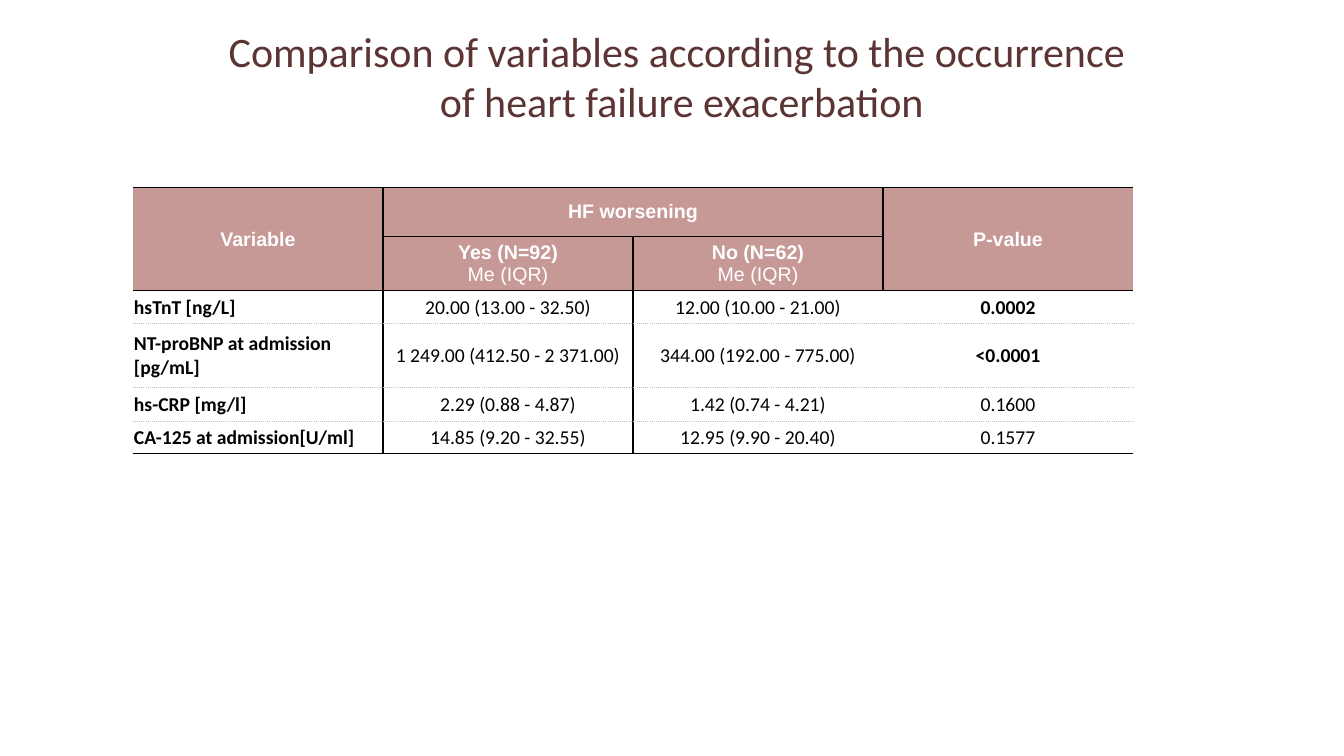
from lxml import etree
from pptx import Presentation
from pptx.dml.color import RGBColor
from pptx.enum import text as t
from pptx.oxml import parse_xml
from pptx.oxml.ns import nsdecls, qn
from pptx.util import Pt


def style(run, size, font, color, bold=False):
    run.font.size = Pt(size)
    run.font.name = font
    run.font.bold = bold
    run.font.color.rgb = RGBColor.from_string(color)


def edge(cell, side, color, dash):
    """Draw a 1 pt border; call in the order L, R, T, B, before the fill."""
    props = cell._tc.get_or_add_tcPr()
    line = etree.SubElement(props, qn(f"a:ln{side}"), w=str(Pt(1)))
    fill = etree.SubElement(line, qn("a:solidFill"))
    etree.SubElement(fill, qn("a:srgbClr"), val=color)
    etree.SubElement(line, qn("a:prstDash"), val=dash)


deck = Presentation()
deck.slide_width, deck.slide_height = Pt(960), Pt(540)
slide = deck.slides.add_slide(deck.slide_layouts[5])

# Title, raised by a bottom margin of one line
title = slide.shapes.title
title.left, title.top, title.width, title.height = Pt(8.6), Pt(33.8), Pt(957), Pt(77)
frame = title.text_frame
frame.text = "Comparison of variables according to the occurrence \vof heart failure exacerbation"
frame.auto_size = t.MSO_AUTO_SIZE.NONE
frame.vertical_anchor = t.MSO_ANCHOR.MIDDLE
frame.margin_bottom = Pt(39.6)
frame.paragraphs[0].alignment = t.PP_ALIGN.CENTER
for run in frame.paragraphs[0].runs:
    style(run, 30, "Calibri", "5B3433")
    shadow = parse_xml(
        f'<a:effectLst {nsdecls("a")}><a:outerShdw blurRad="38100" dist="38100" dir="2700000">'
        '<a:srgbClr val="000000"><a:alpha val="50000"/></a:srgbClr></a:outerShdw></a:effectLst>')
    run.font.fill._xPr.find(qn("a:solidFill")).addnext(shadow)

# Table
rows = [
    ["Variable", "HF worsening", "", "P-value"],
    ["", "Yes (N=92)\nMe (IQR)", "No (N=62)\nMe (IQR)", ""],
    ["hsTnT [ng/L]", "20.00 (13.00 - 32.50)", "12.00 (10.00 - 21.00)", "0.0002"],
    ["NT-proBNP at admission [pg/mL]", "1 249.00 (412.50 - 2 371.00)",
     "344.00 (192.00 - 775.00)", "<0.0001"],
    ["hs-CRP [mg/l]", "2.29 (0.88 - 4.87)", "1.42 (0.74 - 4.21)", "0.1600"],
    ["CA-125 at admission[U/ml]", "14.85 (9.20 - 32.55)", "12.95 (9.90 - 20.40)", "0.1577"],
]
heights = [35.2, 35.2, 23.3, 45.6, 24.5, 23]
strong = {"0.0002", "<0.0001"}
solid, dotted = ("000000", "solid"), ("BFBFBF", "sysDot")
rules = [solid, solid, solid, dotted, dotted, dotted, solid]  # from top to bottom

shape = slide.shapes.add_table(6, 4, Pt(95), Pt(133.9), Pt(714.4), Pt(sum(heights)))
grid = shape.table
grid.first_row = grid.horz_banding = False
shape.element.find(".//" + qn("a:tableStyleId")).text = "{2D5ABB26-0587-4C30-8999-92F81FD0307C}"
for col in grid.columns:
    col.width = Pt(178.6)
for row, height in zip(grid.rows, heights):
    row.height = Pt(height)
for first, last in [((0, 0), (1, 0)), ((0, 1), (0, 2)), ((0, 3), (1, 3))]:
    grid.cell(*first).merge(grid.cell(*last))

for r, row in enumerate(rows):
    head = r < 2
    for c, words in enumerate(row):
        cell = grid.cell(r, c)
        if c == 1:
            edge(cell, "L", *solid)
        if c == 0:
            edge(cell, "R", *solid)
        tall = c in (0, 3)
        if not (tall and r == 1):
            edge(cell, "T", *rules[r])
        if not (tall and r == 0):
            edge(cell, "B", *rules[r + 1])
        if head:
            cell.fill.solid()
            cell.fill.fore_color.rgb = RGBColor.from_string("C69896")
        else:
            cell.fill.background()
            cell.margin_left = cell.margin_right = cell.margin_top = Pt(0.7)
            cell.margin_bottom = 0
        cell.vertical_anchor = t.MSO_ANCHOR.MIDDLE
        if not words:
            continue
        cell.text_frame.text = words
        for n, para in enumerate(cell.text_frame.paragraphs):
            para.alignment = t.PP_ALIGN.CENTER if head or c else t.PP_ALIGN.LEFT
            if head:
                style(para.runs[0], 14, "Arial", "FFFFFF", n == 0)
            else:
                style(para.runs[0], 14, "Calibri", "000000", c == 0 or words in strong)

deck.save("out.pptx")
